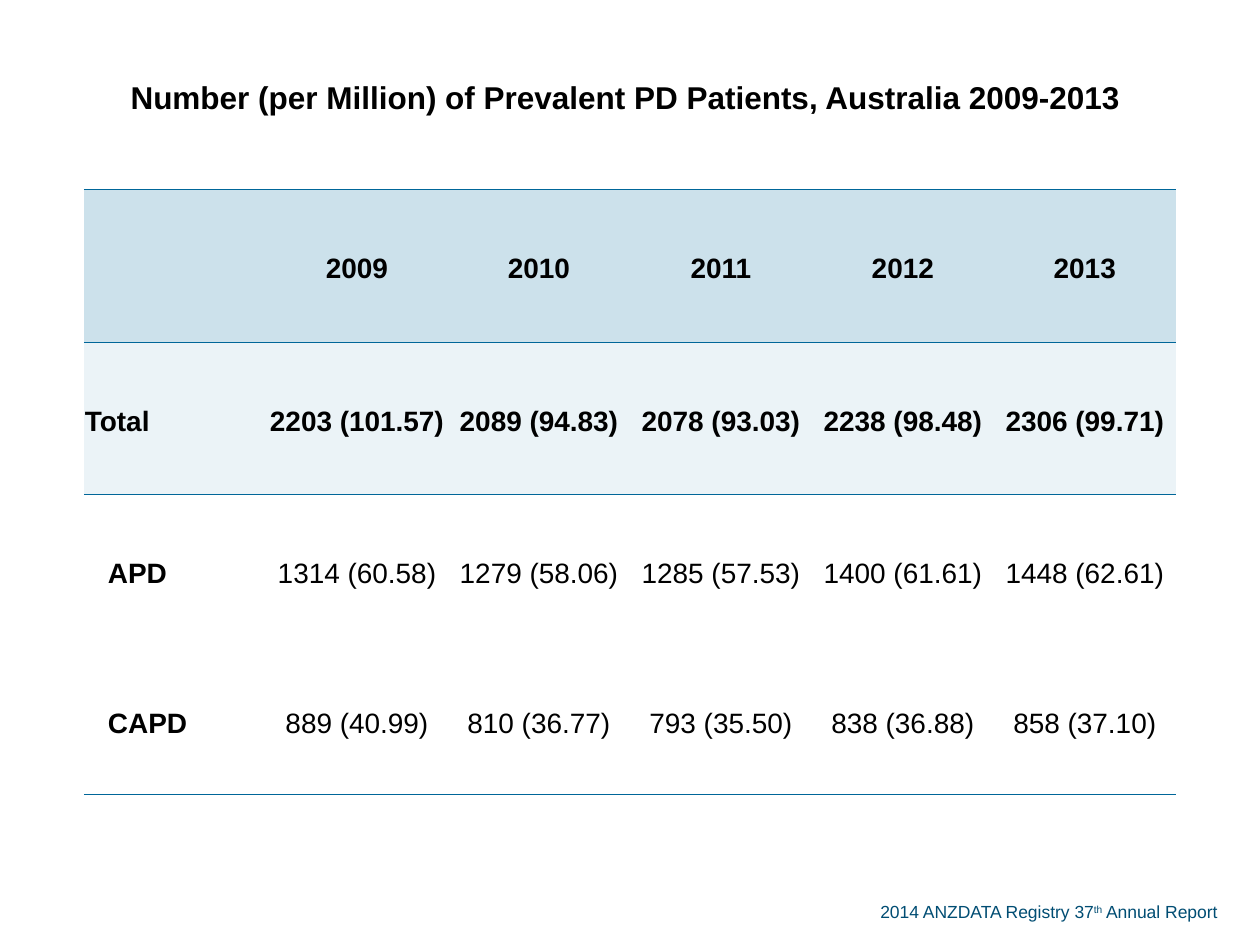
from dataclasses import dataclass

from lxml import etree
from pptx import Presentation
from pptx import util as u
from pptx.dml.color import RGBColor
from pptx.enum import text
from pptx.oxml import ns

PX = 914400 // 126
FONT = "Arial"
BLACK = "000000"
RULE = "006699"
NO_STYLE = "{2D5ABB26-0587-4C30-8999-92F81FD0307C}"
LEFT, COLUMN = 84, 182
TITLE = "Number (per Million) of Prevalent PD Patients, Australia 2009-2013"


@dataclass
class Row:
    """One table row: height in px, cell texts and row format."""

    height: int
    cells: list[str]
    fill: str | None = None
    bold: bool = True
    indent: int = 0
    rules: tuple[str, ...] = ()


ROWS = [
    Row(189, [TITLE], rules=("lnB",)),
    Row(153, ["", "2009", "2010", "2011", "2012", "2013"], "CCE1EB",
        rules=("lnT", "lnB")),
    Row(152, ["Total", "2203 (101.57)", "2089 (94.83)", "2078 (93.03)",
              "2238 (98.48)", "2306 (99.71)"], "EBF3F7", rules=("lnT",)),
    Row(152, ["APD", "1314 (60.58)", "1279 (58.06)", "1285 (57.53)",
              "1400 (61.61)", "1448 (62.61)"], bold=False, indent=23),
    Row(148, ["CAPD", "889 (40.99)", "810 (36.77)", "793 (35.50)",
              "838 (36.88)", "858 (37.10)"], bold=False, indent=23, rules=("lnB",)),
]


def px(length: int) -> u.Emu:
    """Turn px into EMU."""
    return u.Emu(length * PX)


def colour(value: str) -> RGBColor:
    """Turn a hex string into a colour."""
    return RGBColor.from_string(value)


def add_text(para, words: str, *, size: int, hue: str = BLACK,
             bold: bool = False, raised: bool = False) -> None:
    """Add one formatted span to a paragraph."""
    span = para.add_run()
    span.text = words
    span.font.name = FONT
    span.font.size = u.Pt(size)
    span.font.bold = bold
    span.font.color.rgb = colour(hue)
    if raised:
        span.font._element.set("baseline", "30000")


def add_rules(cell, sides: tuple[str, ...]) -> None:
    """Draw thin rules on the given sides of a cell."""
    props = cell._tc.get_or_add_tcPr()
    for place, side in enumerate(sides):
        line = etree.Element(ns.qn(f"a:{side}"), w=str(u.Pt(0.5)))
        fill = etree.SubElement(line, ns.qn("a:solidFill"))
        etree.SubElement(fill, ns.qn("a:srgbClr"), val=RULE)
        props.insert(place, line)


def fill_cell(cell, words: str, row: Row, *, size: int, label: bool) -> None:
    """Format one table cell and write its text."""
    cell.margin_left = cell.margin_right = cell.margin_top = px(1)
    cell.margin_bottom = 0
    cell.vertical_anchor = text.MSO_ANCHOR.MIDDLE
    if row.fill:
        cell.fill.solid()
        cell.fill.fore_color.rgb = colour(row.fill)
    else:
        cell.fill.background()
    add_rules(cell, row.rules)
    para = cell.text_frame.paragraphs[0]
    para.line_spacing = 1.19
    para.alignment = text.PP_ALIGN.LEFT if label else text.PP_ALIGN.CENTER
    if label and row.indent:
        para._p.get_or_add_pPr().set("marL", str(px(row.indent)))
    if words:
        add_text(para, words, size=size, bold=row.bold or label)


def add_patient_table(page) -> None:
    """Add the table whose merged top row holds the title."""
    count = len(ROWS[1].cells)
    height = sum(row.height for row in ROWS)
    table = page.shapes.add_table(len(ROWS), count, px(LEFT), 0,
                                  px(COLUMN * count), px(height)).table
    table.first_row = table.horz_banding = False
    table._tbl.tblPr.find(ns.qn("a:tableStyleId")).text = NO_STYLE
    for column in table.columns:
        column.width = px(COLUMN)
    for index, row in enumerate(ROWS):
        table.rows[index].height = px(row.height)
        words = row.cells + [""] * (count - len(row.cells))
        for place, value in enumerate(words):
            fill_cell(table.cell(index, place), value, row,
                      size=16 if index else 18, label=index > 0 and place == 0)
    title = table.cell(0, 0)
    title.merge(table.cell(0, count - 1))
    title.margin_right = px(10)


def add_source(page) -> None:
    """Add the report line at the bottom right."""
    box = page.shapes.add_textbox(px(868), px(895), px(377), px(34))
    box.text_frame.word_wrap = True
    para = box.text_frame.paragraphs[0]
    for words, raised in (("2014 ANZDATA Registry 37", False), ("th", True),
                          (" Annual Report", False)):
        add_text(para, words, size=10, hue="004D73", raised=raised)


def main() -> None:
    """Build and save the deck."""
    deck = Presentation()
    deck.slide_width, deck.slide_height = px(1260), px(945)
    page = deck.slides.add_slide(deck.slide_layouts[6])
    add_source(page)
    add_patient_table(page)
    deck.save("out.pptx")


if __name__ == "__main__":
    main()
